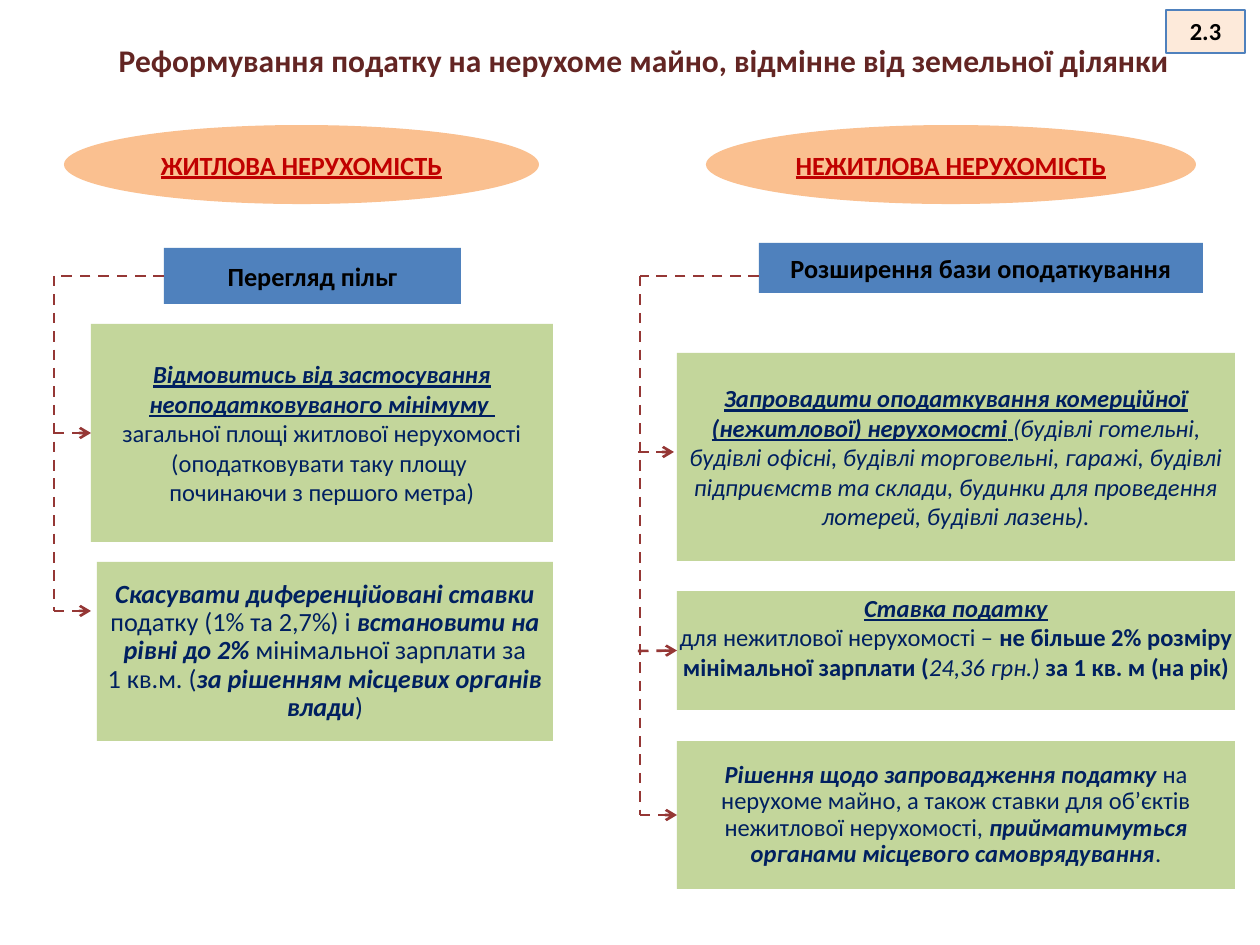
from dataclasses import dataclass

from lxml import etree
from pptx import Presentation
from pptx import util as u
from pptx.dml.color import RGBColor
from pptx.enum import dml, shapes, text
from pptx.oxml.ns import qn


@dataclass(frozen=True)
class Theme:
    """Colours, type sizes and font of the slide."""
    font: str = "Calibri"
    title: str = "632523"
    header: str = "4F81BD"
    card: str = "C3D69B"
    ellipse: str = "FAC090"
    badge: str = "FDEADA"
    ink: str = "000000"
    navy: str = "002060"
    red: str = "C00000"
    line: str = "953735"
    title_size: int = 18
    head_size: int = 15
    body_size: int = 14


THEME = Theme()
PX = 914400 / 126
BREAK = "\n"
LEFT_SIDE = 1


def px(value):
    """Turn a length in px into EMU."""
    return u.Emu(round(value * PX))


def inside(region, box):
    """Shift a box given relative to a region onto the slide."""
    return (region[0] + box[0], region[1] + box[1], *box[2:])


def write(shape, paragraphs, size, color, insets=None, spacing=None, anchor=text.MSO_ANCHOR.MIDDLE):
    """Fill a shape with centred paragraphs of (wording, style letters) runs."""
    frame = shape.text_frame
    frame.word_wrap = True
    frame.vertical_anchor = anchor
    if insets:
        frame.margin_left = frame.margin_right = frame.margin_top = px(insets[0])
        frame.margin_bottom = px(insets[1])
    for index, runs in enumerate(paragraphs):
        paragraph = frame.add_paragraph() if index else frame.paragraphs[0]
        paragraph.alignment = text.PP_ALIGN.CENTER
        if spacing:
            paragraph.line_spacing = spacing
        paragraph.font.name = THEME.font
        paragraph.font.size = u.Pt(size)
        paragraph.font.color.rgb = RGBColor.from_string(color)
        for wording, style in runs:
            if wording == BREAK:
                paragraph.add_line_break()
                continue
            run = paragraph.add_run()
            run.text = wording
            font = paragraph.font if len(runs) == 1 else run.font
            font.bold = "b" in style
            font.italic = "i" in style
            font.underline = "u" in style


def block(slide, kind, box, fill):
    """Add a flat filled shape without an outline."""
    shape = slide.shapes.add_shape(kind, *map(px, box))
    shape.shadow.inherit = False
    shape.fill.solid()
    shape.fill.fore_color.rgb = RGBColor.from_string(fill)
    shape.line.fill.background()
    return shape


def dashed_line(slide, start, end, arrow=False):
    """Add a dashed connector, with an arrowhead at its end on request."""
    connector = slide.shapes.add_connector(shapes.MSO_CONNECTOR.STRAIGHT, *map(px, (*start, *end)))
    connector.line.color.rgb = RGBColor.from_string(THEME.line)
    connector.line.width = u.Pt(1.5)
    connector.line.dash_style = dml.MSO_LINE.DASH
    if arrow:
        etree.SubElement(connector.line._get_or_add_ln(), qn("a:tailEnd"), type="arrow")
    etree.SubElement(connector._element.spPr, qn("a:effectLst"))
    return connector


def meets_left_side(point, box):
    """Tell whether a point lies at the middle of a box's left side."""
    return abs(point[0] - box[0]) <= 1 and abs(point[1] - box[1] - box[3] / 2) <= 1


def add_title(slide, box, wording):
    """Add the slide title."""
    title = slide.shapes.add_textbox(*map(px, box))
    write(title, [[(wording, "b")]], THEME.title_size, THEME.title)


def add_badge(slide, box, wording):
    """Add the outlined section number."""
    badge = block(slide, shapes.MSO_SHAPE.RECTANGLE, box, THEME.badge)
    badge.line.color.rgb = RGBColor.from_string(THEME.header)
    badge.line.width = u.Pt(0.75)
    write(badge, [[(wording, "b")]], THEME.body_size, THEME.ink, anchor=text.MSO_ANCHOR.TOP)


def add_column(slide, region, column):
    """Add one property type: ellipse, header, cards and the dashed tree joining them."""
    name, ellipse_box = column["ellipse"]
    ellipse = block(slide, shapes.MSO_SHAPE.OVAL, inside(region, ellipse_box), THEME.ellipse)
    write(ellipse, [[(name, "bu")]], THEME.head_size, THEME.red)

    heading, header_box = column["header"]
    header_box = inside(region, header_box)
    header = block(slide, shapes.MSO_SHAPE.RECTANGLE, header_box, THEME.header)
    write(header, [[(heading, "b")]], THEME.head_size, THEME.ink, (2, 2))

    trunk_x, trunk_top = inside(region, column["trunk"])
    trunk_bottom = region[1] + column["cards"][-1]["branch"][2]
    start = (header_box[0], trunk_top)
    stem = dashed_line(slide, start, (trunk_x, trunk_top))
    if meets_left_side(start, header_box):
        stem.begin_connect(header, LEFT_SIDE)
    dashed_line(slide, (trunk_x, trunk_top), (trunk_x, trunk_bottom))

    for card in column["cards"]:
        box = inside(region, card["box"])
        shape = block(slide, shapes.MSO_SHAPE.RECTANGLE, box, THEME.card)
        write(shape, card["text"], card.get("size", THEME.body_size), THEME.navy,
              (1, card.get("bottom", 1)), card.get("spacing"))
        begin_x, end_x, y = card["branch"]
        end = inside(region, (end_x, y))
        branch = dashed_line(slide, inside(region, (begin_x, y)), end, arrow=True)
        if meets_left_side(end, box):
            branch.end_connect(shape, LEFT_SIDE)


HOUSING = {
    "ellipse": ("ЖИТЛОВА НЕРУХОМІСТЬ", (10, 0, 475, 79)),
    "header": ("Перегляд пільг", (110, 123, 297, 56)),
    "trunk": (0, 151),
    "cards": [
        {"box": (37, 199, 462, 218), "branch": (0, 37, 308), "text": [
            [("Відмовитись від застосування неоподатковуваного мінімуму ", "biu")],
            [("загальної площі житлової нерухомості", "")],
            [("(оподатковувати таку площу ", "")],
            [("починаючи з першого метра)", "")]]},
        {"box": (43, 437, 456, 179), "branch": (0, 37, 486), "size": THEME.head_size,
         "spacing": 0.9, "text": [[
             ("Скасувати диференційовані ставки ", "bi"), ("податку (1% та 2,7%) і ", ""),
             ("встановити на рівні до 2%", "bi"), (" мінімальної зарплати за", ""),
             (BREAK, ""), ("1 кв.м. (", ""),
             ("за рішенням місцевих органів влади", "bi"), (")", "")]]},
    ],
}

COMMERCIAL = {
    "ellipse": ("НЕЖИТЛОВА НЕРУХОМІСТЬ", (68, 0, 490, 79)),
    "header": ("Розширення бази оподаткування", (121, 118, 444, 50)),
    "trunk": (2, 151),
    "cards": [
        {"box": (39, 228, 558, 208), "branch": (0, 36, 327), "text": [[
            ("Запровадити оподаткування комерційної (нежитлової) нерухомості", "biu"), (" ", "u"),
            ("(будівлі готельні, будівлі офісні, будівлі торговельні, гаражі, будівлі "
             "підприємств та склади, будинки для проведення лотерей, будівлі лазень).", "i")]]},
        {"box": (39, 466, 558, 119), "branch": (0, 39, 526), "bottom": 28, "text": [
            [("Ставка податку", "biu")],
            [("для нежитлової нерухомості – ", ""),
             ("не більше 2% розміру мінімальної зарплати (", "b"),
             ("24,36 грн.) ", "i"), ("за 1 кв. м (на рік)", "b")]]},
        {"box": (39, 616, 558, 148), "branch": (2, 39, 690), "spacing": 0.9, "text": [[
            ("Рішення щодо запровадження податку", "bi"),
            (" на нерухоме майно, а також ставки для об’єктів нежитлової нерухомості, ", ""),
            ("прийматимуться органами місцевого самоврядування", "bi"), (".", "")]]},
    ],
}


def main():
    """Build and save the slide."""
    presentation = Presentation()
    presentation.slide_width, presentation.slide_height = px(1260), px(945)
    slide = presentation.slides.add_slide(presentation.slide_layouts[6])
    add_title(slide, (63, 26, 1162, 68),
              "Реформування податку на нерухоме майно, відмінне від земельної ділянки")
    add_column(slide, (54, 125, 499, 616), HOUSING)
    add_column(slide, (638, 125, 597, 764), COMMERCIAL)
    add_badge(slide, (1166, 10, 79, 43), "2.3")
    presentation.save("out.pptx")


if __name__ == "__main__":
    main()
